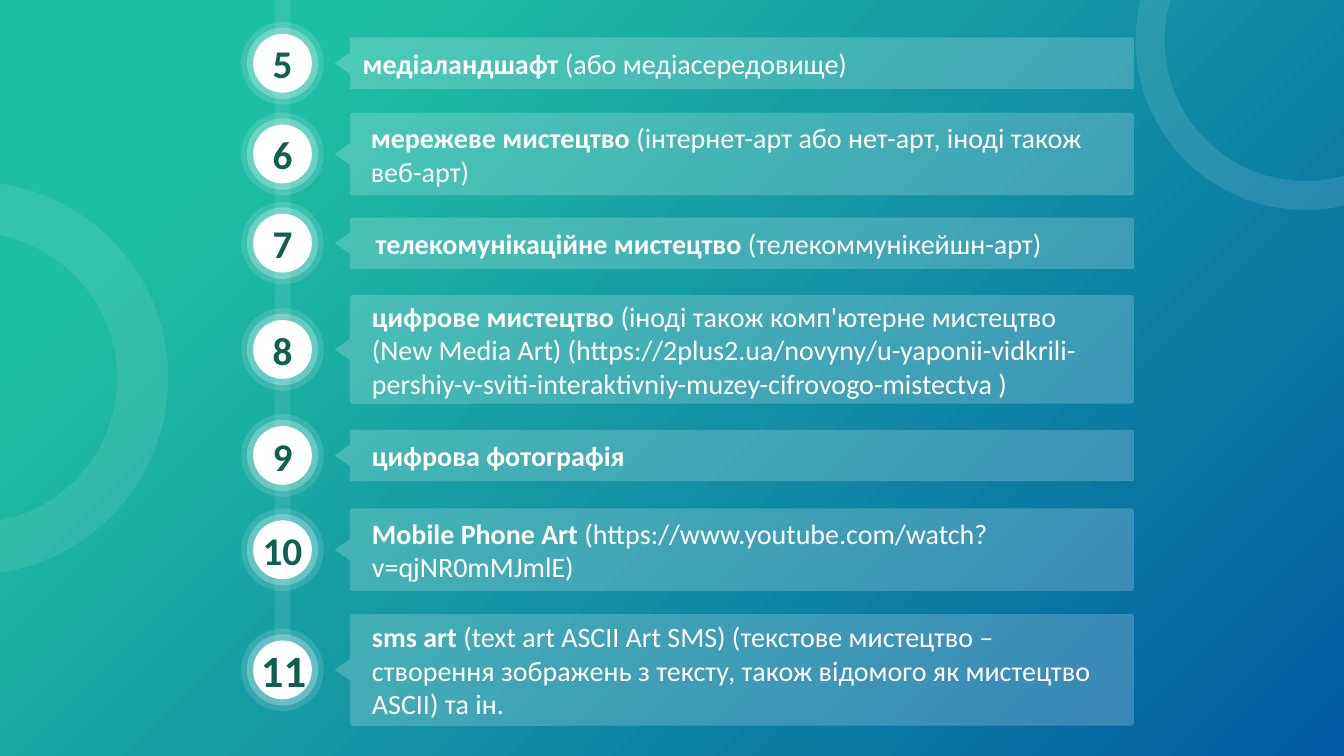
from math import acos, asin, cos, pi, sin, tan

from lxml.etree import SubElement
from pptx import Presentation
from pptx.dml.color import RGBColor
from pptx.enum.shapes import MSO_SHAPE as Preset
from pptx.enum.text import MSO_ANCHOR as Anchor, PP_ALIGN as Align
from pptx.oxml.ns import qn
from pptx.util import Pt

WIDTH, HEIGHT = 960, 540
WHITE, GREEN = "FFFFFF", "106052"
CARD_LEFT, CARD_WIDTH = 250, 560
SPINE_CENTER = 201.8
ITEMS = [
    ("5", 26.8, 36.8, 252, 1, "медіаландшафт", " (або медіасередовище)"),
    ("6", 80.5, 59, 257.8, 2, "мережеве мистецтво ",
     "(інтернет-арт або нет-арт, іноді також веб-арт)"),
    ("7", 155.4, 36.6, 261.2, 1, "телекомунікаційне мистецтво ", "(телекоммунікейшн-арт)"),
    ("8", 210.8, 77.6, 258.6, 3, "цифрове мистецтво ",
     "(іноді також комп'ютерне мистецтво (New Media Art) "
     "(https://2plus2.ua/novyny/u-yaponii-vidkrili-pershiy-v-sviti-"
     "interaktivniy-muzey-cifrovogo-mistectva )"),
    ("9", 307, 36.6, 258.6, 1, "цифрова фотографія", ""),
    ("10", 363.2, 59, 258.6, 2, "Mobile Phone Art ",
     "(https://www.youtube.com/watch?v=qjNR0mMJmlE)"),
    ("11", 438.6, 79.8, 258.6, 3, "sms art ",
     "(text art ASCII Art SMS) (текстове мистецтво – створення зображень "
     "з тексту, також відомого як мистецтво ASCII) та ін."),
]


def rgb(color):
    return RGBColor.from_string(color)


def fill_solid(shape, color, alpha=100):
    shape.shadow.inherit = False
    shape.line.fill.background()
    shape.fill.solid()
    shape.fill.fore_color.rgb = rgb(color)
    if alpha < 100:
        node = shape._element.spPr.find(qn("a:solidFill")).find(qn("a:srgbClr"))
        SubElement(node, qn("a:alpha"), val=str(alpha * 1000))


def add_preset(shapes, preset, left, top, width, height, color, alpha=100):
    shape = shapes.add_shape(preset, Pt(left), Pt(top), Pt(width), Pt(height))
    fill_solid(shape, color, alpha)
    return shape


def add_ring(shapes, center_x, center_y, outer, inner, find_angles, alpha):
    def place(radius, angle):
        return Pt(center_x + radius * cos(angle)), Pt(center_y + radius * sin(angle))

    stops = [(outer, angle) for angle in find_angles(outer)]
    stops += [(inner, angle) for angle in reversed(find_angles(inner))]
    points = [place(*stop) for stop in stops]
    builder = shapes.build_freeform(*points[0])
    builder.add_line_segments(points[1:], close=True)
    ring = builder.convert_to_shape()
    fill_solid(ring, "F2F2F2", alpha)

    segments = list(ring._element.iter(qn("a:lnTo")))
    for segment, (radius, start), (next_radius, end) in zip(segments, stops, stops[1:]):
        if radius != next_radius:
            continue
        pull = 4 / 3 * tan((end - start) / 4)
        reach, bend = radius * (1 + pull ** 2) ** 0.5, asin(pull / (1 + pull ** 2) ** 0.5)
        segment.tag = qn("a:cubicBezTo")
        for index, angle in enumerate((start + bend, end - bend)):
            x, y = place(reach, angle)
            handle = SubElement(segment, qn("a:pt"), x=str(x - ring.left), y=str(y - ring.top))
            segment.insert(index, handle)


def add_backdrop(shapes):
    backdrop = add_preset(shapes, Preset.RECTANGLE, 0, 0, WIDTH, HEIGHT, WHITE)
    backdrop.fill.gradient()
    backdrop.fill.gradient_angle = 315
    for stop, (position, color) in zip(backdrop.fill.gradient_stops,
                                       [(0.17, "1FBFA4"), (1, "035BA3")]):
        stop.position = position
        stop.color.rgb = rgb(color)
    add_ring(shapes, -20, HEIGHT / 2, 140.2, 103.7,
             lambda radius: [-acos(20 / radius), 0, acos(20 / radius)], 10)
    add_ring(shapes, 932.4, 28.8, 121.2, 100.5,
             lambda radius: [acos((WIDTH - 932.4) / radius), pi / 2, pi,
                             pi + asin(28.8 / radius)], 12)


def add_card(shapes, top, height):
    group = shapes.add_group_shape().shapes
    card = add_preset(group, Preset.ROUNDED_RECTANGLE, CARD_LEFT, top, CARD_WIDTH, height,
                      WHITE, 20)
    card.adjustments[0] = 0.03
    pointer = add_preset(group, Preset.ISOSCELES_TRIANGLE, CARD_LEFT - 13.1,
                         top + height / 2 - 5.4, 15.2, 10.8, WHITE, 20)
    pointer.rotation = 270


def style_frame(frame, inset):
    frame.margin_left = frame.margin_right = Pt(inset)
    frame.margin_top = frame.margin_bottom = Pt(3.6)
    frame.vertical_anchor = Anchor.MIDDLE
    frame.word_wrap = True


def style_para(para, size, color):
    para.font.name = "Calibri"
    para.font.size = Pt(size)
    para.font.color.rgb = rgb(color)


def write_number(frame, number, size, align, inset):
    style_frame(frame, inset)
    para = frame.paragraphs[0]
    para.alignment = align
    para.text = number
    style_para(para, size, GREEN)
    para.font.bold = True


def add_badge(shapes, middle, number):
    group = shapes.add_group_shape().shapes
    for diameter, alpha in [(59, 13), (51, 25), (42, 100)]:
        circle = add_preset(group, Preset.OVAL, SPINE_CENTER - diameter / 2,
                            middle - diameter / 2, diameter, diameter, WHITE, alpha)
    if number == "11":
        box = group.add_textbox(Pt(SPINE_CENTER - 24), Pt(middle - 23), Pt(48.2), Pt(46))
        write_number(box.text_frame, number, 32, Align.RIGHT, 7.2)
    else:
        write_number(circle.text_frame, number, 28, Align.CENTER, 0)


def add_term(shapes, left, middle, lines, term, detail):
    height = 24.2 * lines + 7.2
    box = shapes.add_textbox(Pt(left), Pt(middle - height / 2), Pt(546), Pt(height))
    style_frame(box.text_frame, 7.2)
    para = box.text_frame.paragraphs[0]
    style_para(para, 20, WHITE)
    for text, bold in [(term, True), (detail, False)]:
        if text:
            span = para.add_run()
            span.text = text
            span.font.bold = bold


def add_timeline(shapes):
    for _, top, height, *_ in ITEMS:
        add_card(shapes, top, height)
    add_preset(shapes, Preset.RECTANGLE, SPINE_CENTER - 5.6, 0, 11.2, 458.6, WHITE, 9)
    for number, top, height, left, lines, term, detail in ITEMS:
        middle = top + height / 2
        add_badge(shapes, middle, number)
        add_term(shapes, left, middle, lines, term, detail)


def main():
    deck = Presentation()
    deck.slide_width, deck.slide_height = Pt(WIDTH), Pt(HEIGHT)
    page = deck.slides.add_slide(deck.slide_layouts[6])
    add_backdrop(page.shapes)
    add_timeline(page.shapes)
    deck.save("out.pptx")


if __name__ == "__main__":
    main()
